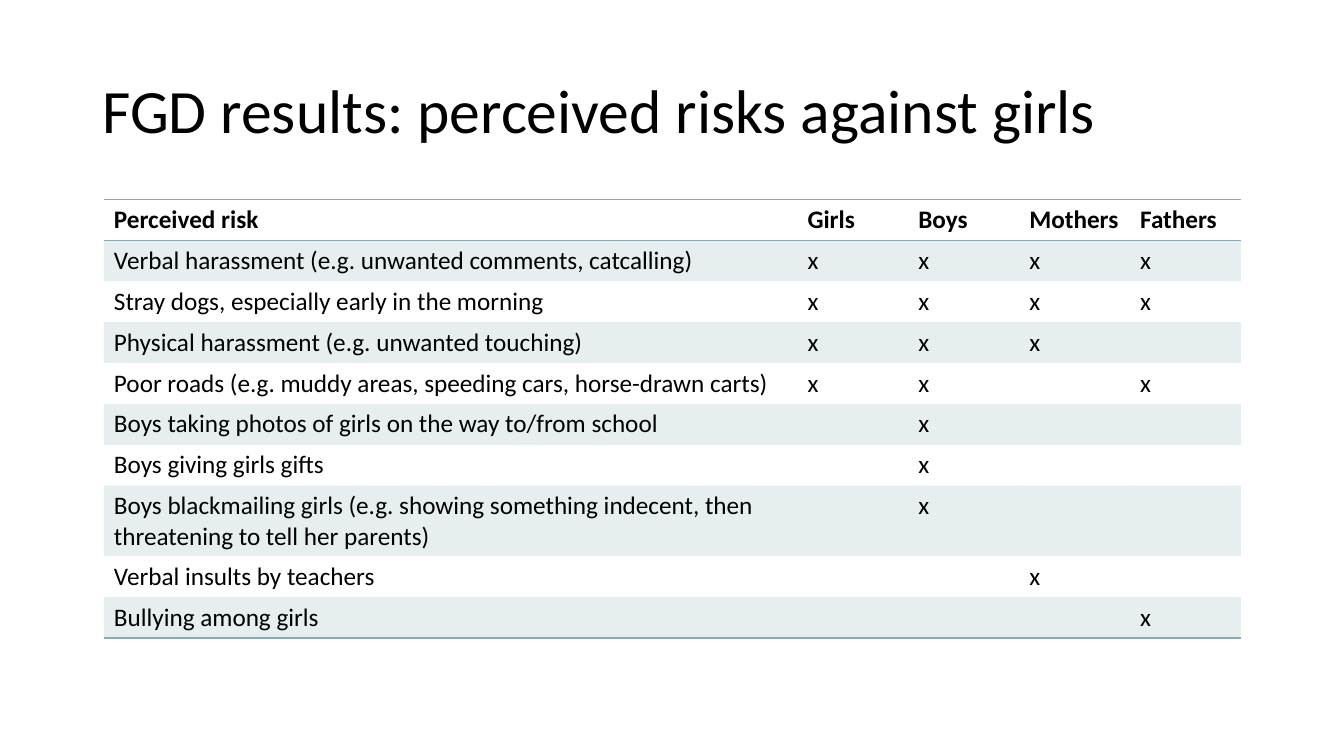
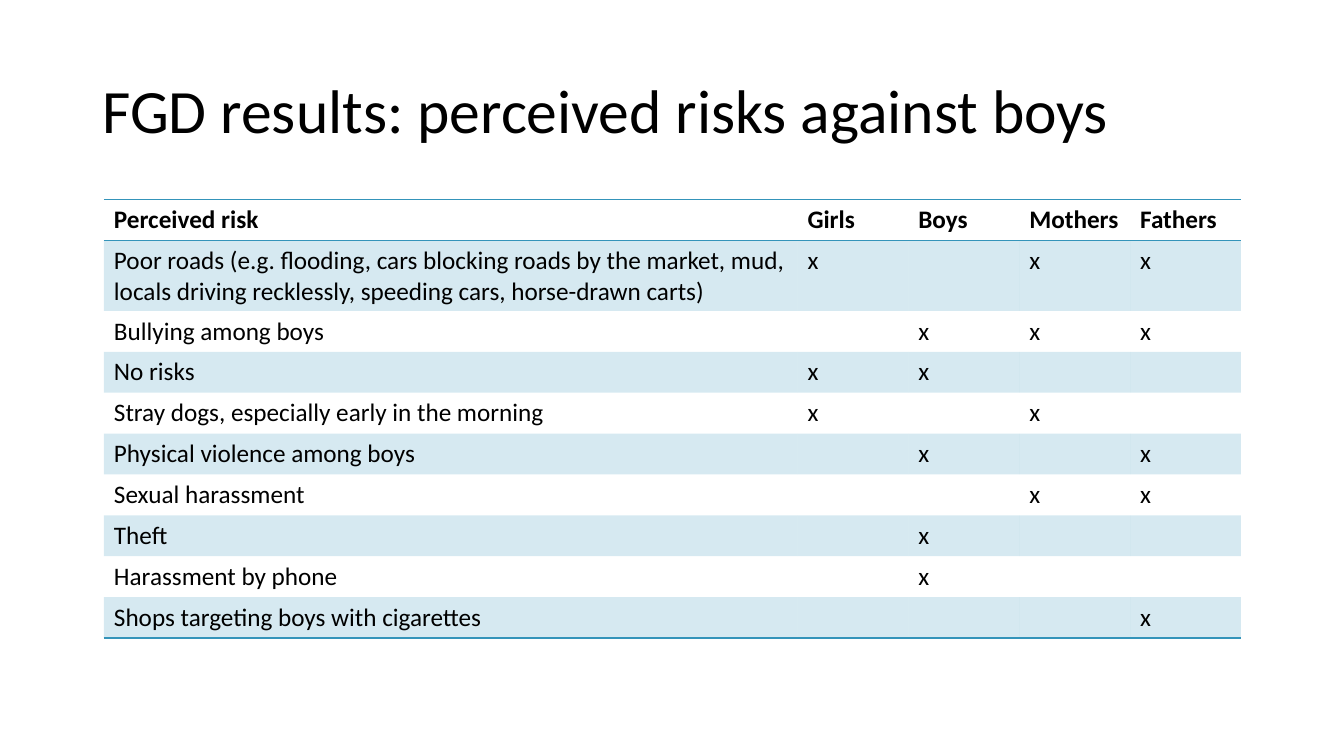
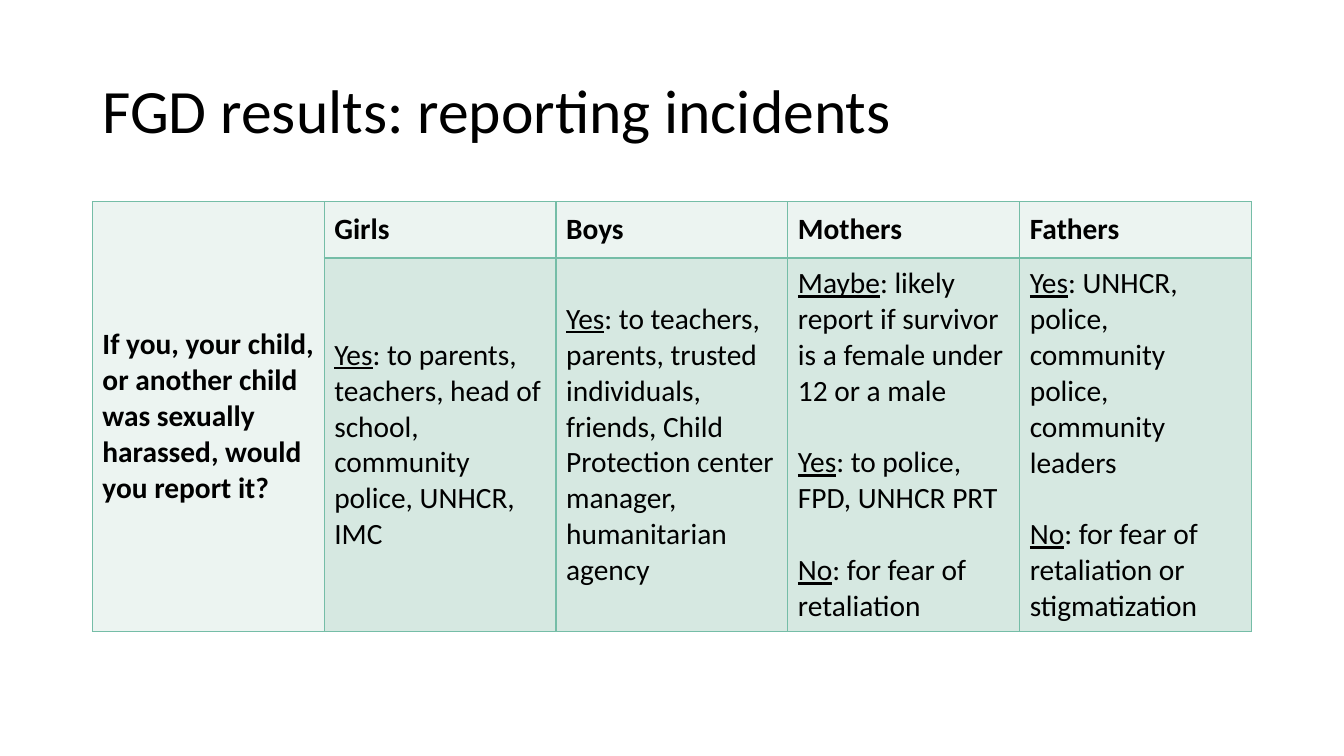
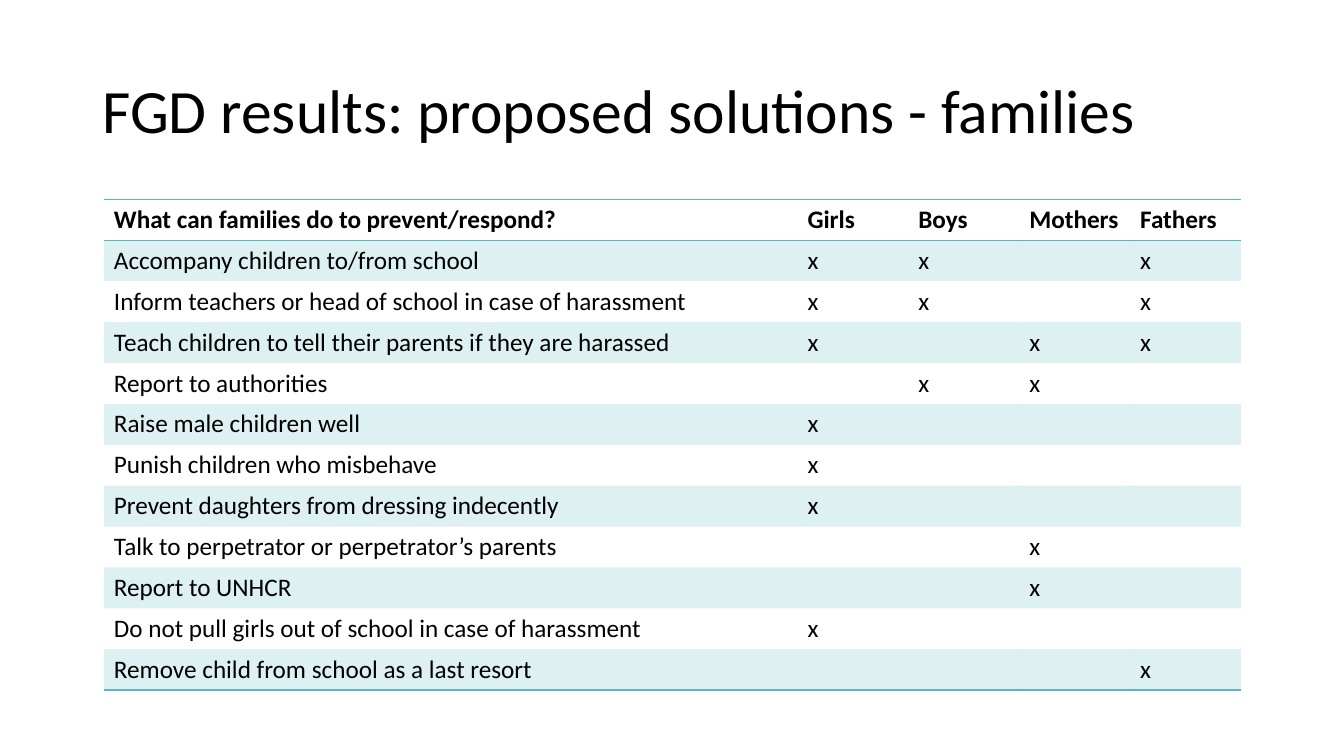
from lxml import etree
from pptx import Presentation
from pptx.dml.color import RGBColor
from pptx.enum import text
from pptx.oxml import ns
from pptx.util import Pt

FONT = "Calibri"
BLACK = RGBColor(0x00, 0x00, 0x00)
GREY_BLUE = RGBColor(0x84, 0xAC, 0xB6)
BLUE = RGBColor(0x34, 0x94, 0xBA)
TEAL = RGBColor(0x58, 0xB6, 0xC0)
GREEN = RGBColor(0x75, 0xBD, 0xA7)
PALE_GREEN = RGBColor(0xEC, 0xF4, 0xF1)
LIGHT_GREEN = RGBColor(0xD6, 0xE8, 0xE1)

NO_STYLE = "{2D5ABB26-0587-4C30-8999-92F81FD0307C}"
BAND_OPACITY = 20
TITLE_SIZE = 44
MATRIX_SIZE = 18
ANSWER_SIZE = 21
ANSWER_GAP = 25.6
GROUPS = ["Girls", "Boys", "Mothers", "Fathers"]

RISKS_AGAINST_GIRLS = [
    ("Verbal harassment (e.g. unwanted comments, catcalling)", "GBMF"),
    ("Stray dogs, especially early in the morning", "GBMF"),
    ("Physical harassment (e.g. unwanted touching)", "GBM"),
    ("Poor roads (e.g. muddy areas, speeding cars, horse-drawn carts)", "GBF"),
    ("Boys taking photos of girls on the way to/from school", "B"),
    ("Boys giving girls gifts", "B"),
    ("Boys blackmailing girls (e.g. showing something indecent, then "
     "threatening to tell her parents)", "B"),
    ("Verbal insults by teachers", "M"),
    ("Bullying among girls", "F"),
]

RISKS_AGAINST_BOYS = [
    ("Poor roads (e.g. flooding, cars blocking roads by the market, mud, "
     "locals driving recklessly, speeding cars, horse-drawn carts)", "GMF"),
    ("Bullying among boys", "BMF"),
    ("No risks", "GB"),
    ("Stray dogs, especially early in the morning", "GM"),
    ("Physical violence among boys", "BF"),
    ("Sexual harassment", "MF"),
    ("Theft", "B"),
    ("Harassment by phone", "B"),
    ("Shops targeting boys with cigarettes", "F"),
]

FAMILY_SOLUTIONS = [
    ("Accompany children to/from school", "GBF"),
    ("Inform teachers or head of school in case of harassment", "GBF"),
    ("Teach children to tell their parents if they are harassed", "GMF"),
    ("Report to authorities", "BM"),
    ("Raise male children well", "G"),
    ("Punish children who misbehave", "G"),
    ("Prevent daughters from dressing indecently", "G"),
    ("Talk to perpetrator or perpetrator’s parents", "M"),
    ("Report to UNHCR", "M"),
    ("Do not pull girls out of school in case of harassment", "G"),
    ("Remove child from school as a last resort", "F"),
]

REPORTING_QUESTION = ("If you, your child, or another child was sexually "
                      "harassed, would you report it?")
REPORTING_ANSWERS = [
    [("Yes", ": to parents, teachers, head of school, community police, "
             "UNHCR, IMC")],
    [("Yes", ": to teachers, parents, trusted individuals, friends, Child "
             "Protection center manager, humanitarian agency")],
    [("Maybe", ": likely report if survivor is a female under 12 or a male"),
     ("Yes", ": to police, FPD, UNHCR PRT"),
     ("No", ": for fear of retaliation")],
    [("Yes", ": UNHCR, police, community police, community leaders"),
     ("No", ": for fear of retaliation or stigmatization")],
]


def add_run(paragraph, words, size, bold=False, underline=False):
    run = paragraph.add_run()
    run.text = words
    run.font.name = FONT
    run.font.size = Pt(size)
    run.font.color.rgb = BLACK
    run.font.bold = bold
    run.font.underline = underline


def add_titled_slide(presentation, title):
    slide = presentation.slides.add_slide(presentation.slide_layouts[6])
    box = slide.shapes.add_textbox(Pt(66), Pt(28.75), Pt(828), Pt(104.4))
    frame = box.text_frame
    frame.word_wrap = True
    frame.vertical_anchor = text.MSO_ANCHOR.MIDDLE
    paragraph = frame.paragraphs[0]
    paragraph.line_spacing = 0.9
    add_run(paragraph, title, TITLE_SIZE)
    return slide


def add_plain_table(slide, left, top, widths, heights):
    shape = slide.shapes.add_table(len(heights), len(widths), Pt(left), Pt(top),
                                   Pt(sum(widths)), Pt(sum(heights)))
    table = shape.table
    table.first_row = table.horz_banding = False
    next(shape.element.iter(ns.qn("a:tableStyleId"))).text = NO_STYLE
    for column, width in zip(table.columns, widths):
        column.width = Pt(width)
    for row, height in zip(table.rows, heights):
        row.height = Pt(height)
    return table


def set_borders(cell, color, sides):
    properties = cell._tc.get_or_add_tcPr()
    for side in sides:
        line = etree.SubElement(properties, ns.qn("a:ln" + side), w=str(Pt(1)))
        fill = etree.SubElement(line, ns.qn("a:solidFill"))
        etree.SubElement(fill, ns.qn("a:srgbClr"), val=str(color))


def fill_cell(cell, color, opacity=100):
    cell.fill.solid()
    cell.fill.fore_color.rgb = color
    if opacity < 100:
        color_element = next(cell._tc.tcPr.find(ns.qn("a:solidFill")).iterchildren())
        etree.SubElement(color_element, ns.qn("a:alpha"), val=str(opacity * 1000))


def add_matrix(slide, heading, entries, color):
    rows = [[heading] + GROUPS]
    for label, marks in entries:
        rows.append([label] + ["x" if group[0] in marks else "" for group in GROUPS])
    table = add_plain_table(slide, 74.2, 142.5, [495.4] + [79.2] * len(GROUPS),
                            [29.2] * len(rows))
    last = len(rows) - 1
    for row_index, row in enumerate(rows):
        sides = {0: "TB", last: "B"}.get(row_index, "")
        for column_index, words in enumerate(row):
            cell = table.cell(row_index, column_index)
            set_borders(cell, color, sides)
            if row_index % 2:
                fill_cell(cell, color, BAND_OPACITY)
            else:
                cell.fill.background()
            if words:
                add_run(cell.text_frame.paragraphs[0], words, MATRIX_SIZE,
                        bold=row_index == 0)


def add_answers(cell, answers):
    frame = cell.text_frame
    for index, (verdict, detail) in enumerate(answers):
        paragraph = frame.add_paragraph() if index else frame.paragraphs[0]
        if index:
            paragraph.space_before = Pt(ANSWER_GAP)
        add_run(paragraph, verdict, ANSWER_SIZE, underline=True)
        add_run(paragraph, detail, ANSWER_SIZE)


def add_reporting_table(slide):
    table = add_plain_table(slide, 66, 144, [165.6] * 5, [40.3, 267])
    table.cell(0, 0).merge(table.cell(1, 0))
    for cell in table.iter_cells():
        set_borders(cell, GREEN, "LRTB")
        fill_cell(cell, PALE_GREEN)
        cell.vertical_anchor = text.MSO_ANCHOR.MIDDLE
    for column, heading in enumerate([REPORTING_QUESTION] + GROUPS):
        add_run(table.cell(0, column).text_frame.paragraphs[0], heading,
                ANSWER_SIZE, bold=True)
    for column, answers in enumerate(REPORTING_ANSWERS, start=1):
        cell = table.cell(1, column)
        fill_cell(cell, LIGHT_GREEN)
        add_answers(cell, answers)


def main():
    presentation = Presentation()
    presentation.slide_width = Pt(960)
    presentation.slide_height = Pt(540)

    slide = add_titled_slide(presentation, "FGD results: perceived risks against girls")
    add_matrix(slide, "Perceived risk", RISKS_AGAINST_GIRLS, GREY_BLUE)

    slide = add_titled_slide(presentation, "FGD results: perceived risks against boys")
    add_matrix(slide, "Perceived risk", RISKS_AGAINST_BOYS, BLUE)

    slide = add_titled_slide(presentation, "FGD results: reporting incidents")
    add_reporting_table(slide)

    slide = add_titled_slide(presentation, "FGD results: proposed solutions - families")
    add_matrix(slide, "What can families do to prevent/respond?", FAMILY_SOLUTIONS, TEAL)

    presentation.save("out.pptx")


if __name__ == "__main__":
    main()
